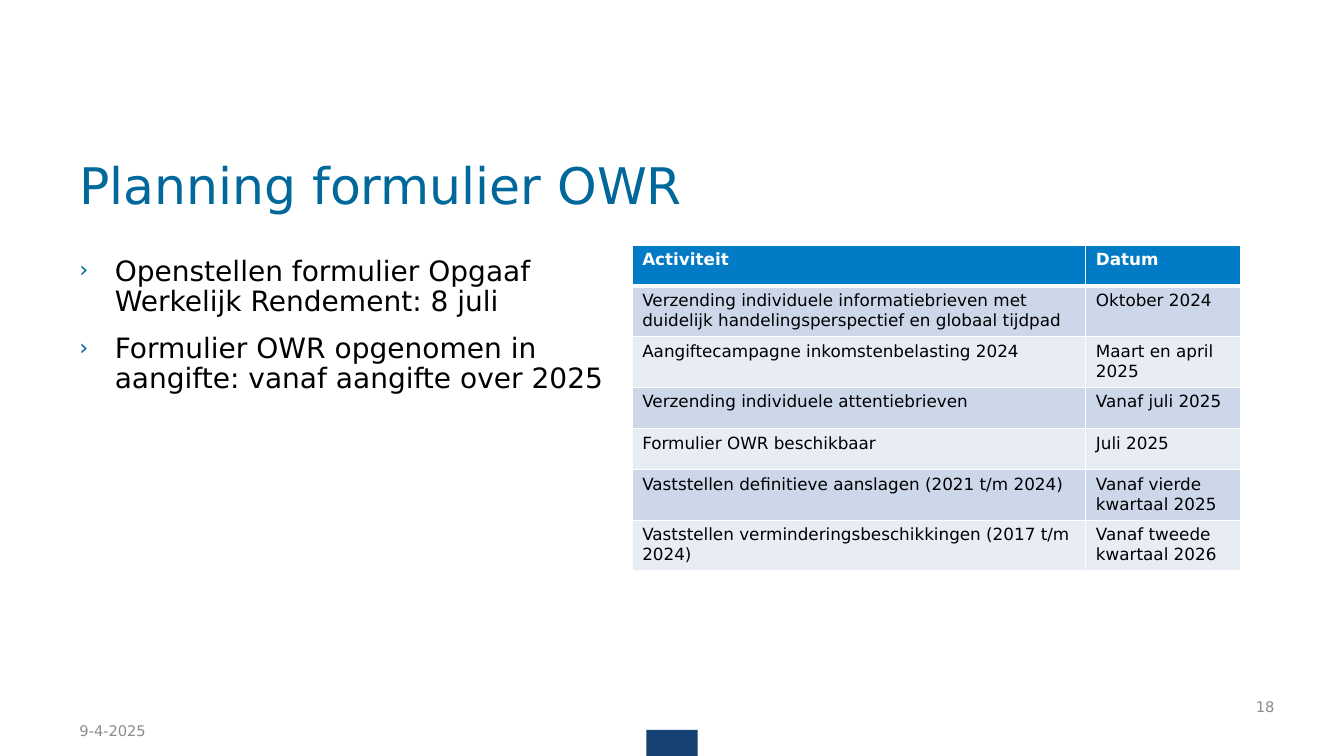
from lxml import etree
from pptx import Presentation
from pptx import util as u
from pptx.dml.color import RGBColor
from pptx.enum import shapes, text
from pptx.oxml import ns

WHITE = RGBColor(0xFF, 0xFF, 0xFF)
BLACK = RGBColor(0x00, 0x00, 0x00)
GREY = RGBColor(0x8C, 0x8C, 0x8C)
NAVY = RGBColor(0x15, 0x42, 0x73)
TEAL = RGBColor(0x00, 0x68, 0x9A)
HEADER_BLUE = RGBColor(0x01, 0x7B, 0xC6)
BAND_DARK = RGBColor(0xCC, 0xD7, 0xEA)
BAND_LIGHT = RGBColor(0xE7, 0xEC, 0xF5)

BULLETS = [
    "Openstellen formulier Opgaaf Werkelijk Rendement: 8 juli",
    "Formulier OWR opgenomen in aangifte: vanaf aangifte over 2025",
]
PLANNING = [
    ("Activiteit", "Datum"),
    ("Verzending individuele informatiebrieven met duidelijk "
     "handelingsperspectief en globaal tijdpad", "Oktober 2024"),
    ("Aangiftecampagne inkomstenbelasting 2024", "Maart en april 2025"),
    ("Verzending individuele attentiebrieven", "Vanaf juli 2025"),
    ("Formulier OWR beschikbaar", "Juli 2025"),
    ("Vaststellen definitieve aanslagen (2021 t/m 2024)",
     "Vanaf vierde kwartaal 2025"),
    ("Vaststellen verminderingsbeschikkingen (2017 t/m 2024)",
     "Vanaf tweede kwartaal 2026"),
]


def add_element(parent, tag, **attributes):
    return etree.SubElement(parent, ns.qn(tag), **attributes)


class SlideBuilder:
    font = "DejaVu Sans"

    def __init__(self, slide):
        self.slide = slide

    def span(self, para, words, size, color, bold=False):
        span = para.add_run()
        span.text = words
        span.font.name = self.font
        span.font.size = u.Pt(size)
        span.font.bold = bold
        span.font.color.rgb = color

    def block(self, place, color):
        block = self.slide.shapes.add_shape(
            shapes.MSO_SHAPE.RECTANGLE, *map(u.Inches, place))
        block.shadow.inherit = False
        block.fill.solid()
        block.fill.fore_color.rgb = color
        block.line.fill.background()

    def text_box(self, place, lines, size, color, margins=(0.1, 0.05, 0.1, 0.05),
                 anchor=text.MSO_ANCHOR.TOP, align=text.PP_ALIGN.LEFT,
                 spacing=1.0, bullet=None):
        """Margins run left, top, right, bottom; each line is a paragraph."""
        box = self.slide.shapes.add_textbox(*map(u.Inches, place))
        frame = box.text_frame
        frame.word_wrap = True
        frame.vertical_anchor = anchor
        (frame.margin_left, frame.margin_top,
         frame.margin_right, frame.margin_bottom) = map(u.Inches, margins)
        for index, words in enumerate(lines):
            para = frame.add_paragraph() if index else frame.paragraphs[0]
            para.alignment = align
            para.line_spacing = spacing
            if index:
                para.space_before = u.Pt(12)
            if bullet:
                self.bullet(para, bullet)
            self.span(para, words, size, color)

    def bullet(self, para, mark):
        props = para._p.get_or_add_pPr()
        indent = u.Inches(0.35)
        props.set("marL", str(indent))
        props.set("indent", str(-indent))
        add_element(add_element(props, "a:buClr"), "a:srgbClr", val=str(TEAL))
        add_element(props, "a:buSzPct", val="80000")
        add_element(props, "a:buFont", typeface=self.font)
        add_element(props, "a:buChar", char=mark)

    def cell_borders(self, cell, widths):
        """Draw white borders; widths in points for left, right, top, bottom."""
        props = cell._tc.get_or_add_tcPr()
        for side, width in zip("LRTB", widths):
            line = add_element(props, f"a:ln{side}", w=str(u.Pt(width)))
            fill = add_element(line, "a:solidFill")
            add_element(fill, "a:srgbClr", val=str(WHITE))

    def table(self, place, rows, column_widths, row_height):
        """Build a banded table whose first row is the header."""
        table = self.slide.shapes.add_table(
            len(rows), len(column_widths), *map(u.Inches, place)).table
        for column, width in zip(table.columns, column_widths):
            column.width = u.Inches(width)
        for r, values in enumerate(rows):
            table.rows[r].height = u.Inches(row_height)
            header = r == 0
            band = HEADER_BLUE if header else BAND_DARK if r % 2 else BAND_LIGHT
            top, bottom = (3 if r == 1 else 1), (3 if header else 1)
            for c, words in enumerate(values):
                cell = table.cell(r, c)
                self.cell_borders(cell, (1, 1, top, bottom))
                cell.fill.solid()
                cell.fill.fore_color.rgb = band
                self.span(cell.text_frame.paragraphs[0], words, 12,
                          WHITE if header else BLACK, bold=header)


def main():
    deck = Presentation()
    deck.slide_width, deck.slide_height = u.Inches(13.33), u.Inches(7.5)
    page = SlideBuilder(deck.slides.add_slide(deck.slide_layouts[6]))

    page.block((6.41, 7.24, 0.51, 0.26), NAVY)
    page.text_box((0.69, 1.15, 11.95, 1.04), ["Planning formulier OWR"], 36, TEAL,
                  anchor=text.MSO_ANCHOR.BOTTOM, spacing=0.9)
    page.text_box((0.69, 2.5, 5.47, 4.3), BULLETS, 20, BLACK,
                  spacing=0.9, bullet="›")
    page.text_box((0.69, 7.16, 5.47, 0.29), ["9-4-2025"], 10.5, GREY,
                  margins=(0.1, 0, 0.1, 0.05))
    page.text_box((7.17, 6.8, 5.47, 0.35), ["18"], 10.5, GREY,
                  margins=(0.1, 0.05, 0, 0.05), anchor=text.MSO_ANCHOR.BOTTOM,
                  align=text.PP_ALIGN.RIGHT)
    page.table((6.27, 2.43, 6.02, 2.87), PLANNING, (4.5, 1.53), 0.41)

    deck.save("out.pptx")


if __name__ == "__main__":
    main()
